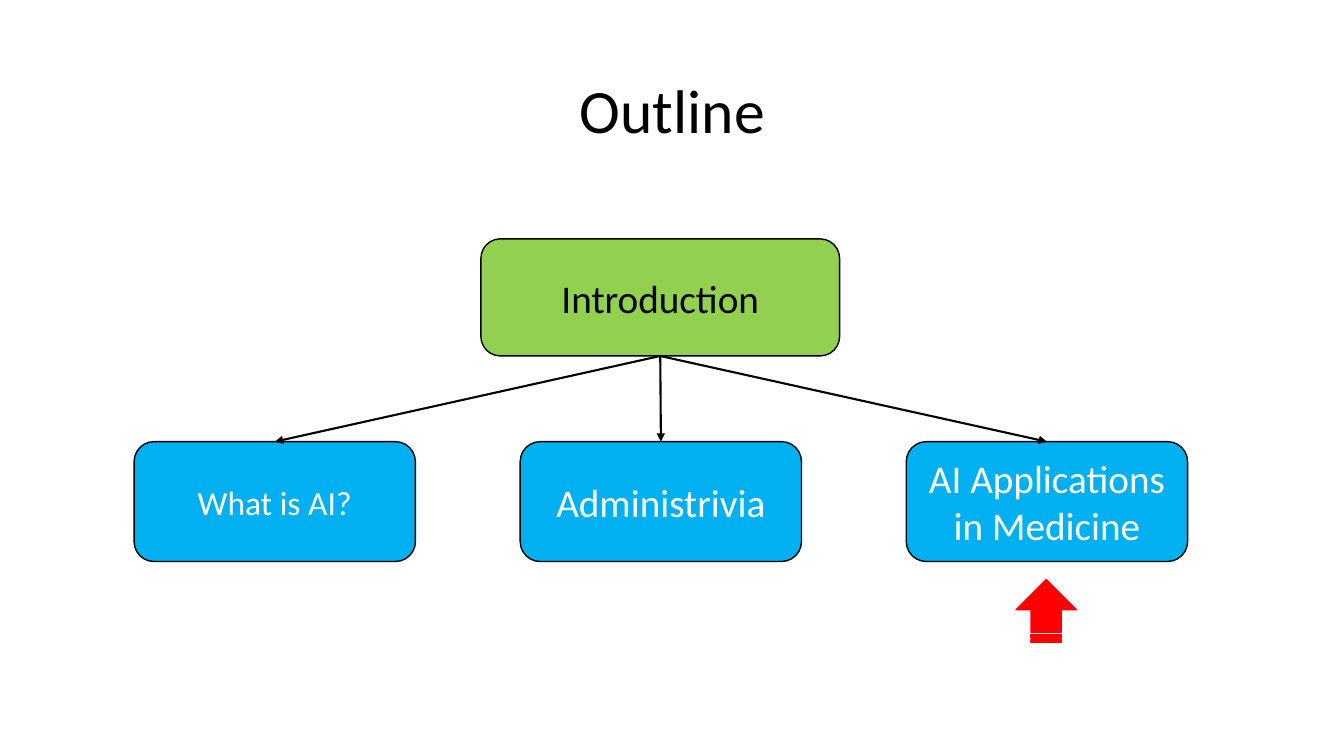
from dataclasses import dataclass

from lxml import etree
from pptx import Presentation
from pptx import util as u
from pptx.dml.color import RGBColor
from pptx.enum import shapes, text
from pptx.oxml import ns
from pptx.util import Cm


@dataclass(frozen=True)
class Theme:
    font: str = "Calibri"
    black: str = "000000"
    white: str = "FFFFFF"
    green: str = "92D050"
    blue: str = "00B0F0"
    red: str = "FF0000"
    title_size: int = 44
    label_size: int = 28
    small_size: int = 24
    outline: float = 1
    branch: float = 1.5


THEME = Theme()
BOTTOM_SITE, TOP_SITE = 2, 0


def set_format(target, values):
    for name, value in values.items():
        setattr(target, name, value)


def write(box, words, size, color, line_spacing=1.0):
    """Put one centred paragraph in the middle of a box."""
    set_format(box.text_frame, {
        "word_wrap": True,
        "vertical_anchor": text.MSO_ANCHOR.MIDDLE,
    })
    para = box.text_frame.paragraphs[0]
    set_format(para, {
        "alignment": text.PP_ALIGN.CENTER,
        "line_spacing": line_spacing,
    })
    span = para.add_run()
    span.text = words
    set_format(span.font, {"name": THEME.font, "size": u.Pt(size)})
    span.font.color.rgb = RGBColor.from_string(color)


def add_title(page, words):
    box = page.shapes.add_textbox(Cm(2.34), Cm(1.02), Cm(29.21), Cm(3.68))
    write(box, words, THEME.title_size, THEME.black, line_spacing=0.9)


def add_filled(page, kind, place, fill, line):
    box = page.shapes.add_shape(kind, *map(Cm, place))
    box.shadow.inherit = False
    box.fill.solid()
    box.fill.fore_color.rgb = RGBColor.from_string(fill)
    box.line.color.rgb = RGBColor.from_string(line)
    box.line.width = u.Pt(THEME.outline)
    return box


def add_node(page, place, fill, words, size, color):
    box = add_filled(page, shapes.MSO_SHAPE.ROUNDED_RECTANGLE, place,
                     fill, THEME.black)
    write(box, words, size, color)
    return box


def add_branch(page, parent, child):
    """Draw an arrow from the bottom of parent to the top of child."""
    branch = page.shapes.add_connector(
        shapes.MSO_CONNECTOR.STRAIGHT, 0, 0, 0, 0)
    branch.begin_connect(parent, BOTTOM_SITE)
    branch.end_connect(child, TOP_SITE)
    branch.line.color.rgb = RGBColor.from_string(THEME.black)
    branch.line.width = u.Pt(THEME.branch)
    line = branch.line._get_or_add_ln()
    etree.SubElement(line, ns.qn("a:tailEnd"), type="triangle")
    etree.SubElement(branch._element.spPr, ns.qn("a:effectLst"))


def add_marker(page, place):
    marker = add_filled(page, shapes.MSO_SHAPE.STRIPED_RIGHT_ARROW, place,
                        THEME.red, THEME.red)
    marker.rotation = 270


def main():
    deck = Presentation()
    set_format(deck, {"slide_width": Cm(33.87), "slide_height": Cm(19.05)})
    page = deck.slides.add_slide(deck.slide_layouts[6])

    add_title(page, "Outline")
    root = add_node(page, (12.12, 6.02, 9.04, 2.95), THEME.green,
                    "Introduction", THEME.label_size, THEME.black)

    topics = [
        ("What is AI?", THEME.small_size),
        ("Administrivia", THEME.label_size),
        ("AI Applications in Medicine", THEME.label_size),
    ]
    left, pitch = 3.38, 9.73
    nodes = [
        add_node(page, (left + column * pitch, 11.13, 7.09, 3.02),
                 THEME.blue, words, size, THEME.white)
        for column, (words, size) in enumerate(topics)
    ]
    for node in nodes:
        add_branch(page, root, node)

    add_marker(page, (25.58, 14.63, 1.57, 1.52))
    deck.save("out.pptx")


if __name__ == "__main__":
    main()
